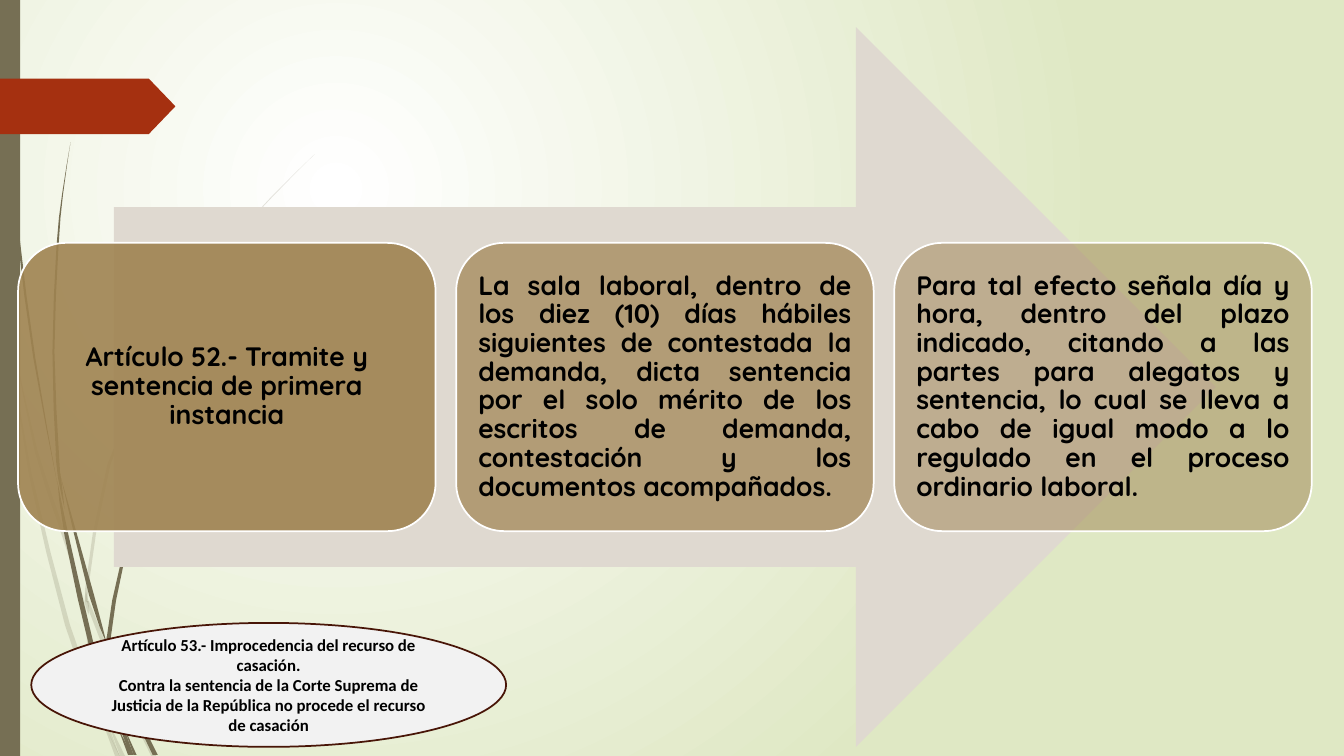
from lxml import etree
from pptx import Presentation
from pptx.dml.color import RGBColor
from pptx.enum.shapes import MSO_SHAPE as SHAPE
from pptx.enum.text import MSO_ANCHOR as ANCHOR, PP_ALIGN as ALIGN
from pptx.oxml.ns import qn
from pptx.util import Pt

PX = 9144
WIDTH, HEIGHT = 1333, 750
COLORS = {
    "white": "FFFFFF", "meadow": "DFE8C4", "stem": "766F54", "flag": "A53010",
    "arrow": "DFD9D0", "card": "9F8351", "oval": "F2F2F2", "rim": "481507",
    "text": "000000",
}
CARDS = [
    ("Artículo 52.- Tramite y sentencia de primera instancia", ALIGN.CENTER, 90),
    ("La sala laboral, dentro de los diez (10) días hábiles siguientes de "
     "contestada la demanda, dicta sentencia por el solo mérito de los escritos "
     "de demanda, contestación y los documentos acompañados.", ALIGN.JUSTIFY, 70),
    ("Para tal efecto señala día y hora, dentro del plazo indicado, citando a las "
     "partes para alegatos y sentencia, lo cual se lleva a cabo de igual modo a lo "
     "regulado en el proceso ordinario laboral.", ALIGN.JUSTIFY, 50),
]
OVAL_TEXT = [
    "Artículo 53.- Improcedencia del recurso de casación.",
    "Contra la sentencia de la Corte Suprema de Justicia de la República no "
    "procede el recurso de casación",
]
PALE_BLADES = [
    [(0, 282, 0), (5, 312, 4), (11, 350, 0)],
    [(14, 345, 0), (36, 448, 3), (60, 521, 4), (84, 599, 0)],
    [(88, 596, 0), (91, 608, 4), (125, 693, 4), (153, 751, 5)],
    [(105, 711, 0), (122, 751, 5)],
    [(11, 350, 0), (30, 470, 3), (67, 620, 5), (92, 688, 5), (101, 714, 0)],
    [(84, 599, 0), (89, 646, 4), (94, 686, 3), (105, 711, 0)],
    [(312, 153, 0), (268, 197, 1), (228, 244, 1), (159, 348, 2), (108, 461, 3),
     (86, 584, 3), (88, 596, 0)],
    [(101, 714, 0), (117, 751, 5)],
    [(85, 586, 0), (86, 598, 4), (88, 610, 0)],
    [(93, 683, 0), (102, 710, 4), (119, 751, 0)],
]
DARK_BLADES = [
    [(4, 0, 1), (8, 110, 1), (18, 232, 2), (34, 355, 2), (57, 481, 0)],
    [(60, 472, 0), (91, 591, 5), (106, 639, 0)],
    [(110, 641, 0), (112, 652, 3), (134, 707, 4), (154, 749, 5)],
    [(57, 477, 0), (66, 531, 4), (95, 658, 5), (117, 722, 0)],
    [(70, 141, 0), (62, 193, 1), (57, 245, 2), (53, 349, 2), (57, 451, 3),
     (60, 472, 0)],
    [(122, 719, 0), (134, 749, 3)],
    [(55, 449, 0), (59, 474, 3), (64, 505, 0)],
    [(260, 344, 0), (231, 373, 1), (204, 405, 1), (157, 475, 2), (123, 551, 3),
     (108, 632, 4), (110, 641, 0)],
    [(117, 722, 0), (129, 749, 4)],
    [(106, 645, 0), (110, 673, 4), (113, 698, 5), (122, 719, 0)],
    [(106, 631, 0), (108, 643, 4), (111, 656, 0)],
    [(110, 691, 0), (117, 712, 4), (131, 749, 3)],
]


def rgb(name):
    """Return the named colour."""
    return RGBColor.from_string(COLORS[name])


def paint(s, color, alpha=100, line=None):
    """Give a shape its fill, opacity and outline, without a shadow."""
    s.shadow.inherit = False
    s.fill.solid()
    s.fill.fore_color.rgb = rgb(color)
    if alpha < 100:
        clr = next(s.element.spPr.iter(qn("a:srgbClr")))
        etree.SubElement(clr, qn("a:alpha"), val=str(alpha * 1000))
    if line:
        s.line.color.rgb = rgb(line)
        s.line.width = Pt(1.25)
    else:
        s.line.fill.background()
    return s


def add_box(slide, kind, box, color, **style):
    """Place a painted preset shape in a box of px lengths."""
    s = slide.shapes.add_shape(kind, *(round(v * PX) for v in box))
    return paint(s, color, **style)


def write(s, texts, font, size, align, spacing=1.0):
    """Write bold, vertically centred paragraphs into a shape."""
    tf = s.text_frame
    tf.word_wrap = True
    tf.vertical_anchor = ANCHOR.MIDDLE
    for i, text in enumerate(texts):
        p = tf.add_paragraph() if i else tf.paragraphs[0]
        p.text = text
        p.alignment = align
        p.line_spacing = spacing
        p.font.name, p.font.size, p.font.bold = font, Pt(size), True
        p.font.color.rgb = rgb("text")


def smooth(knots, steps=2):
    """Return points on a Catmull-Rom curve through the knots."""
    padded = [knots[0], *knots, knots[-1]]
    points = []
    for a, b, c, d in zip(padded, padded[1:], padded[2:], padded[3:]):
        for t in (n / steps for n in range(steps)):
            points.append(tuple(
                (2 * q + (r - p) * t + (2 * p - 5 * q + 4 * r - s) * t ** 2
                 + (3 * q - p - 3 * r + s) * t ** 3) / 2
                for p, q, r, s in zip(a, b, c, d)))
    return points + [knots[-1]]


def add_blade(slide, knots, alpha):
    """Draw one tapered piece of grass from (x, y, width) knots."""
    spine = smooth(knots)
    left = [((x - w / 2) * PX, y * PX) for x, y, w in spine]
    right = [((x + w / 2) * PX, y * PX) for x, y, w in reversed(spine)]
    fb = slide.shapes.build_freeform(*left[0], scale=1.0)
    fb.add_line_segments(left[1:] + right, close=True)
    paint(fb.convert_to_shape(), "stem", alpha)


def add_backdrop(slide):
    """Add the radial background, grass, side bar and flag."""
    fill = slide.background.fill
    fill.gradient()
    for stop, name in zip(fill.gradient_stops, ("white", "meadow")):
        stop.color.rgb = rgb(name)
    grad = next(slide.element.iter(qn("a:gradFill")))
    circle = etree.Element(qn("a:path"), path="circle")
    etree.SubElement(circle, qn("a:fillToRect"),
                     l="50000", t="50000", r="100000", b="100000")
    grad.replace(grad.find(qn("a:lin")), circle)
    for blades, alpha in ((PALE_BLADES, 20), (DARK_BLADES, 100)):
        for knots in blades:
            add_blade(slide, knots, alpha)
    add_box(slide, SHAPE.RECTANGLE, (0, 0, 20, HEIGHT), "stem")
    flag = add_box(slide, SHAPE.PENTAGON, (0, 78, 174, 55), "flag")
    flag.adjustments[0] = 0.48


def add_process(slide, x, y, w, h):
    """Add the wide arrow with a row of cards across its middle."""
    inset = 95
    add_box(slide, SHAPE.RIGHT_ARROW, (x + inset, y, w - 2 * inset, h), "arrow")
    card_w, card_h = 414, 286
    pitch = (w - card_w) / (len(CARDS) - 1)
    for i, (text, align, alpha) in enumerate(CARDS):
        box = (x + i * pitch, y + (h - card_h) / 2, card_w, card_h)
        s = add_box(slide, SHAPE.ROUNDED_RECTANGLE, box, "card",
                    alpha=alpha, line="white")
        tf = s.text_frame
        tf.margin_left = tf.margin_right = tf.margin_top = tf.margin_bottom = 8 * PX
        write(s, [text], "Quicksand", 19, align, 0.9)


def add_oval(slide, *box):
    """Add the oval with the article on cassation."""
    s = add_box(slide, SHAPE.OVAL, box, "oval", line="rim")
    write(s, OVAL_TEXT, "Calibri", 12, ALIGN.CENTER)


def main():
    """Build and save the slide."""
    prs = Presentation()
    prs.slide_width, prs.slide_height = WIDTH * PX, HEIGHT * PX
    slide = prs.slides.add_slide(prs.slide_layouts[6])
    add_backdrop(slide)
    add_process(slide, 18, 27, 1283, 714)
    add_oval(slide, 31, 618, 471, 123)
    prs.save("out.pptx")


if __name__ == "__main__":
    main()
